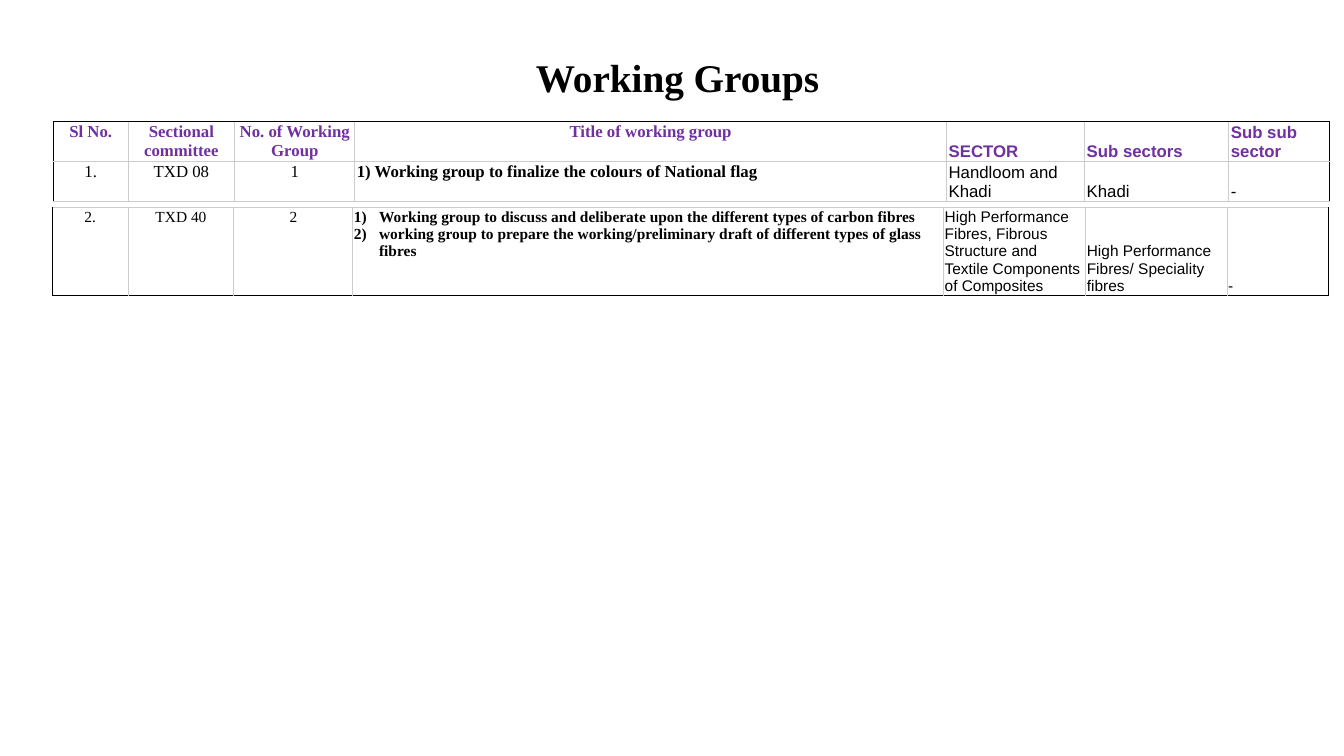
"""Builds the Working Groups slide with its two joined tables."""
from lxml.etree import SubElement
from pptx import Presentation
from pptx.dml.color import RGBColor
from pptx.enum.text import MSO_ANCHOR, PP_ALIGN
from pptx.oxml import parse_xml
from pptx.oxml.ns import nsdecls, qn
from pptx.util import Inches, Pt

BLACK = RGBColor(0x00, 0x00, 0x00)
PURPLE = RGBColor(0x70, 0x30, 0xA0)
GREY = RGBColor(0xCC, 0xCC, 0xCC)
SERIF, SANS = "Times New Roman", "Arial"
TITLE_COLUMN = 3


def set_borders(cell, colours):
    """Draw the left, right, top and bottom borders of a cell."""
    properties = cell._tc.get_or_add_tcPr()
    for position, (side, colour) in enumerate(zip("LRTB", colours)):
        properties.insert(position, parse_xml(
            f'<a:ln{side} {nsdecls("a")} w="{Pt(0.75)}"><a:solidFill>'
            f'<a:srgbClr val="{colour}"/></a:solidFill></a:ln{side}>'))


def number_paragraph(para):
    """Give a paragraph a hanging automatic number."""
    properties = para._p.get_or_add_pPr()
    properties.set("marL", str(Inches(0.25)))
    properties.set("indent", str(-Inches(0.25)))
    SubElement(properties, qn("a:buFont"), typeface="+mj-lt")
    SubElement(properties, qn("a:buAutoNum"), type="arabicParenR")


deck = Presentation()
deck.slide_width, deck.slide_height = Inches(13.33), Inches(7.5)
page = deck.slides.add_slide(deck.slide_layouts[5])

title = page.shapes.title
title.left, title.top = Inches(0.49), Inches(0.4)
title.width, title.height = Inches(12.46), Inches(0.79)
title.text_frame.text = "Working Groups"
title.text_frame.vertical_anchor = MSO_ANCHOR.MIDDLE
heading = title.text_frame.paragraphs[0]
heading.alignment = PP_ALIGN.CENTER
heading.line_spacing = 0.9
heading.font.name, heading.font.size, heading.font.bold = SERIF, Pt(28), True
heading.font.color.rgb = BLACK

tables = [
    {"left": 0.53, "top": 1.21, "size": 12, "inset": 0.02, "header": True,
     "columns": [0.74, 1.06, 1.19, 5.87, 1.37, 1.43, 1], "heights": [0.39, 0.4],
     "rows": [
         ["Sl No.", "Sectional committee", "No. of Working Group",
          "Title of working group", "SECTOR", "Sub sectors", "Sub sub sector"],
         ["1.", "TXD 08", "1",
          "1) Working group to finalize the colours of National flag",
          "Handloom and Khadi", "Khadi", "-"]]},
    {"left": 0.52, "top": 2.06, "size": 11, "inset": 0.01, "header": False,
     "columns": [0.75, 1.05, 1.18, 5.86, 1.41, 1.4, 1.01], "heights": [0.86],
     "rows": [
         ["2.", "TXD 40", "2",
          "Working group to discuss and deliberate upon the different types of carbon fibres\n"
          "working group to prepare the working/preliminary draft of different types of glass fibres",
          "High Performance Fibres, Fibrous Structure and Textile Components of Composites",
          "High Performance Fibres/ Speciality fibres", "-"]]},
]

for entry in tables:
    rows, columns = entry["rows"], entry["columns"]
    table = page.shapes.add_table(
        len(rows), len(columns), Inches(entry["left"]), Inches(entry["top"]),
        Inches(sum(columns)), Inches(sum(entry["heights"]))).table
    table.first_row = table.horz_banding = False
    for column, width in zip(table.columns, columns):
        column.width = Inches(width)
    for row, height in zip(table.rows, entry["heights"]):
        row.height = Inches(height)

    for row_index, texts in enumerate(rows):
        is_header = entry["header"] and row_index == 0
        is_last = not entry["header"]
        for column_index, text in enumerate(texts):
            cell = table.cell(row_index, column_index)
            cell.text = text
            cell.margin_left = cell.margin_right = Inches(entry["inset"])
            cell.margin_top = cell.margin_bottom = Inches(0.01)
            is_sector = column_index > TITLE_COLUMN
            is_title = column_index == TITLE_COLUMN
            cell.vertical_anchor = MSO_ANCHOR.BOTTOM if is_sector else MSO_ANCHOR.TOP
            cell.fill.background()
            outer = (column_index == 0, column_index == len(columns) - 1,
                     is_header, is_last)
            set_borders(cell, [BLACK if edge else GREY for edge in outer])
            centred = column_index < TITLE_COLUMN or (is_title and is_header)
            for para in cell.text_frame.paragraphs:
                para.alignment = PP_ALIGN.CENTER if centred else PP_ALIGN.LEFT
                para.font.name = SANS if is_sector else SERIF
                para.font.size = Pt(entry["size"])
                para.font.bold = is_header or is_title
                para.font.color.rgb = PURPLE if is_header else BLACK
                if is_title and len(cell.text_frame.paragraphs) > 1:
                    number_paragraph(para)

deck.save("out.pptx")
